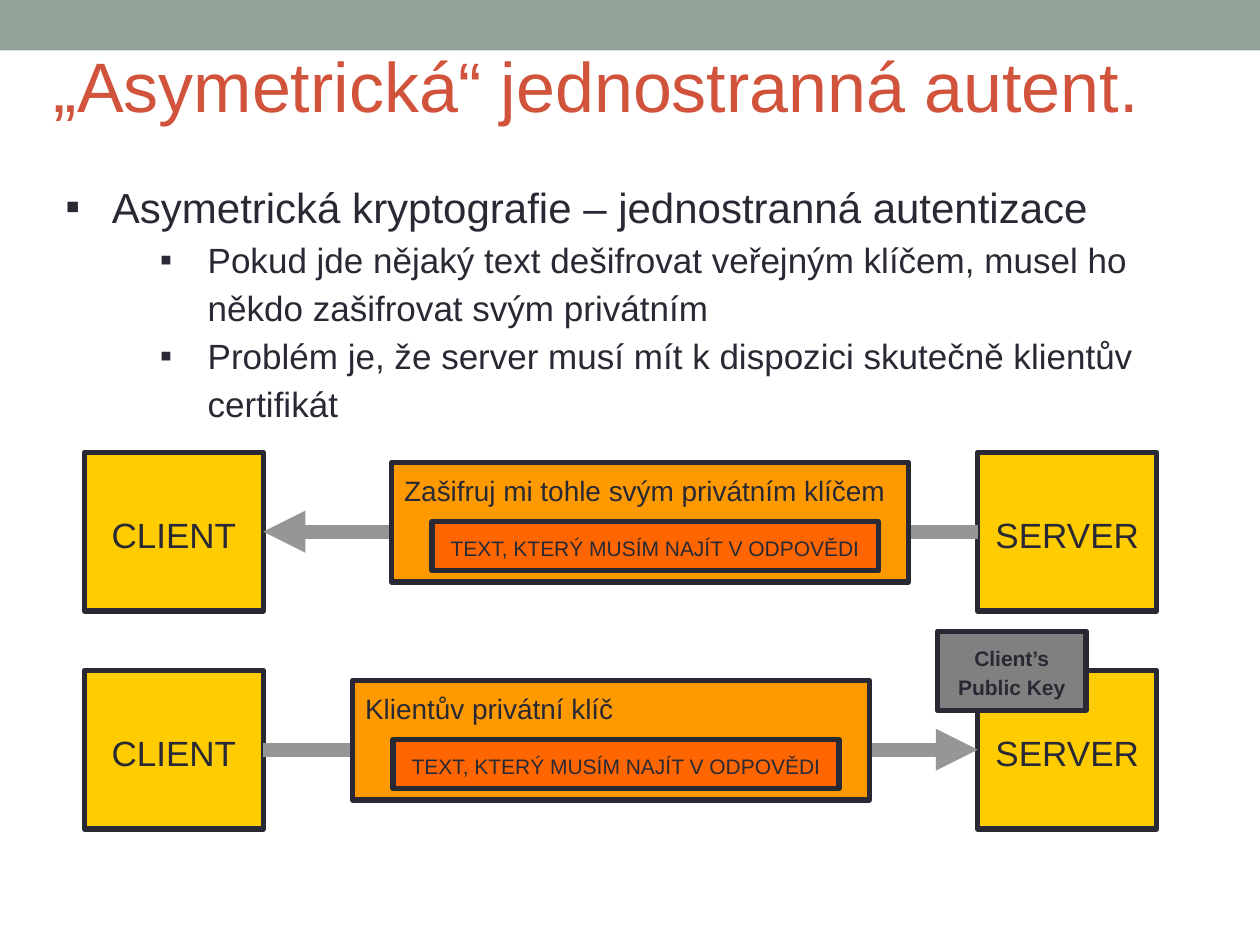
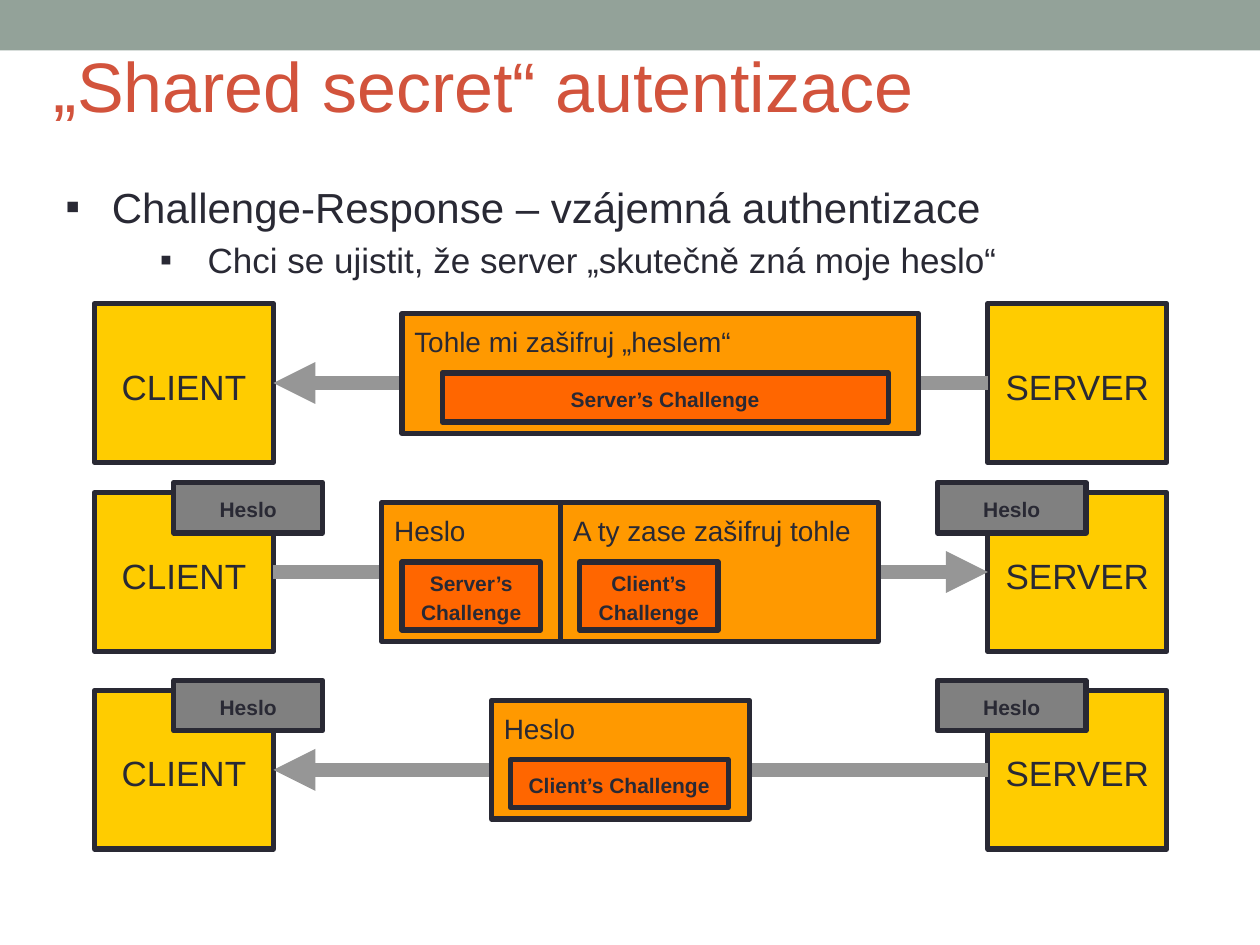
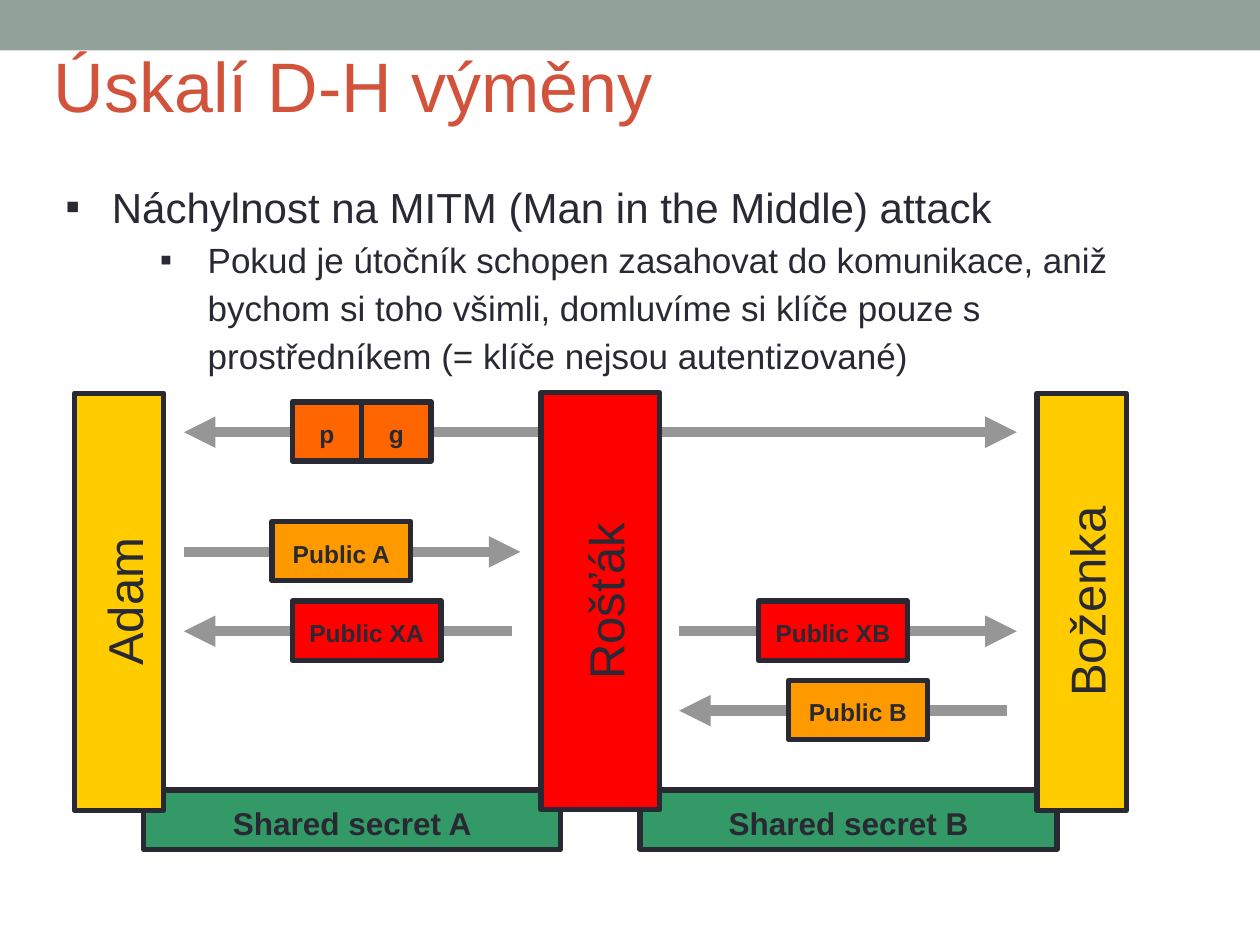
from lxml.etree import SubElement
from pptx import Presentation
from pptx.dml.color import RGBColor
from pptx.enum.shapes import MSO_CONNECTOR, MSO_SHAPE
from pptx.enum.text import MSO_ANCHOR, PP_ALIGN
from pptx.oxml.ns import qn
from pptx.util import Pt

PX = 9144
INK = RGBColor(0x29, 0x29, 0x34)
SAGE = RGBColor(0x93, 0xA2, 0x99)
BRICK = RGBColor(0xD2, 0x53, 0x3C)
YELLOW = RGBColor(0xFF, 0xCC, 0x00)
AMBER = RGBColor(0xFF, 0x99, 0x00)
ORANGE = RGBColor(0xFF, 0x66, 0x00)
RED = RGBColor(0xFF, 0x00, 0x00)
GREEN = RGBColor(0x33, 0x99, 0x66)
GREY = RGBColor(0x80, 0x80, 0x80)
ARROW_GREY = RGBColor(0x96, 0x96, 0x96)

LINE_SPACING = 1.15
BULLET_LEVELS = [
    {"size": 24, "marL": 37, "indent": -37},
    {"size": 20, "marL": 113, "indent": -38},
]
PARTY_SIZE = 142, 126
PARTY_GAP = 709
PILLAR_LENGTH = 331
PILLAR_MIDDLE = 477
KEY_HEIGHT = 47


class Deck:
    def __init__(self):
        self.presentation = Presentation()
        self.presentation.slide_width = 1000 * PX
        self.presentation.slide_height = 750 * PX
        self.slide = None

    def start(self, title, *bullets):
        self.slide = self.presentation.slides.add_slide(self.presentation.slide_layouts[6])
        self.rectangle(0, 0, 1000, 40, SAGE).line.fill.background()
        heading = self.text_frame(33, 28, 939, 77, MSO_ANCHOR.BOTTOM)
        self.add_text(heading.paragraphs[0], title, 40, color=BRICK)
        body = self.text_frame(42, 133, 917, 201, MSO_ANCHOR.TOP)
        for index, bullet in enumerate(bullets):
            paragraph = body.add_paragraph() if index else body.paragraphs[0]
            self.bullet(paragraph, bullet, min(index, 1))

    def text_frame(self, left, top, width, height, anchor):
        frame = self.slide.shapes.add_textbox(left * PX, top * PX, width * PX, height * PX).text_frame
        frame.word_wrap = True
        frame.vertical_anchor = anchor
        return frame

    def add_text(self, paragraph, text, size, bold=False, color=INK):
        run = paragraph.add_run()
        run.text = text
        run.font.color.rgb = color
        for attribute, value in {"name": "Arial", "size": Pt(size), "bold": bold}.items():
            setattr(run.font, attribute, value)

    def bullet(self, paragraph, text, level):
        style = BULLET_LEVELS[level]
        for attribute, value in {"level": level, "line_spacing": LINE_SPACING}.items():
            setattr(paragraph, attribute, value)
        properties = paragraph._p.get_or_add_pPr()
        for attribute in ("marL", "indent"):
            properties.set(attribute, str(style[attribute] * PX))
        SubElement(properties, qn("a:buFont"), typeface="Arial")
        SubElement(properties, qn("a:buChar"), char="▪")
        self.add_text(paragraph, text, style["size"])

    def rectangle(self, left, top, width, height, fill):
        shape = self.slide.shapes.add_shape(
            MSO_SHAPE.RECTANGLE, left * PX, top * PX, width * PX, height * PX)
        shape.shadow.inherit = False
        shape.fill.solid()
        shape.fill.fore_color.rgb = fill
        return shape

    def box(self, left, top, width, height, fill, text, size, bold=False,
            align=PP_ALIGN.CENTER, anchor=MSO_ANCHOR.MIDDLE):
        shape = self.rectangle(left, top, width, height, fill)
        shape.line.color.rgb = INK
        shape.line.width = Pt(3)
        shape.text_frame.word_wrap = True
        shape.text_frame.vertical_anchor = anchor
        paragraph = shape.text_frame.paragraphs[0]
        for attribute, value in {"alignment": align, "line_spacing": LINE_SPACING}.items():
            setattr(paragraph, attribute, value)
        before = SubElement(paragraph._p.get_or_add_pPr(), qn("a:spcBef"))
        SubElement(before, qn("a:spcPct"), val="50000")
        self.add_text(paragraph, text, size, bold)
        return shape

    def arrow(self, start, end, y, weight=6, both_ends=False):
        line = self.slide.shapes.add_connector(
            MSO_CONNECTOR.STRAIGHT, start * PX, y * PX, end * PX, y * PX)
        line.line.color.rgb = ARROW_GREY
        line.line.width = Pt(weight)
        outline = line.line._get_or_add_ln()
        for tip in ("a:headEnd", "a:tailEnd")[not both_ends:]:
            SubElement(outline, qn(tip), type="triangle")
        SubElement(line._element.spPr, qn("a:effectLst"))
        return line

    def exchange(self, left, top, to_server):
        server = self.box(left + PARTY_GAP, top, *PARTY_SIZE, YELLOW, "SERVER", 20)
        client = self.box(left, top, *PARTY_SIZE, YELLOW, "CLIENT", 20)
        client_end, server_end = (client, 3, left + PARTY_SIZE[0]), (server, 1, left + PARTY_GAP)
        sender, receiver = (client_end, server_end) if to_server else (server_end, client_end)
        line = self.arrow(sender[2], receiver[2], top + PARTY_SIZE[1] // 2, weight=8)
        line.begin_connect(*sender[:2])
        line.end_connect(*receiver[:2])

    def message(self, left, top, width, height, label, payload, payload_inset, payload_width, bold=True):
        self.box(left, top, width, height, AMBER, label, 16,
                 align=PP_ALIGN.LEFT, anchor=MSO_ANCHOR.TOP)
        self.box(left + payload_inset, top + 47, payload_width, height - 56,
                 ORANGE, payload, 12, bold)

    def known_key(self, left, top, text, height=40):
        self.box(left, top, 118, height, GREY, text, 12, True)

    def pillar(self, center, width, fill, name):
        pillar = self.box(center - PILLAR_LENGTH // 2, PILLAR_MIDDLE - width // 2,
                          PILLAR_LENGTH, width, fill, name, 28)
        pillar.rotation = 270

    def sent_key(self, left, middle, width, fill, text):
        self.box(left, middle - KEY_HEIGHT // 2 - 1, width, KEY_HEIGHT, fill, text, 14, True)


def one_sided_authentication(deck):
    deck.start(
        "„Asymetrická“ jednostranná autent.",
        "Asymetrická kryptografie – jednostranná autentizace",
        "Pokud jde nějaký text dešifrovat veřejným klíčem, musel ho někdo zašifrovat svým privátním",
        "Problém je, že server musí mít k dispozici skutečně klientův certifikát",
    )
    for top, to_server, message_left, label in (
        (359, False, 311, "Zašifruj mi tohle svým privátním klíčem"),
        (532, True, 280, "Klientův privátní klíč"),
    ):
        deck.exchange(67, top, to_server)
        deck.message(message_left, top + 8, 410, 95, label,
                     "TEXT, KTERÝ MUSÍM NAJÍT V ODPOVĚDI", 32, 354, bold=False)
    deck.known_key(744, 501, "Client’s Public Key", height=63)


def shared_secret(deck):
    deck.start(
        "„Shared secret“ autentizace",
        "Challenge-Response – vzájemná authentizace",
        "Chci se ujistit, že server „skutečně zná moje heslo“",
    )
    server_challenge, client_challenge = "Server’s Challenge", "Client’s Challenge"
    rows = (
        (241, False, False, [(319, 410, 95, "Tohle mi zašifruj „heslem“", server_challenge, 32, 354)]),
        (391, True, True, [(303, 142, 110, "Heslo", server_challenge, 16, 110),
                           (445, 252, 110, "A ty zase zašifruj tohle", client_challenge, 15, 110)]),
        (548, False, True, [(390, 205, 94, "Heslo", client_challenge, 15, 173)]),
    )
    for top, to_server, password_known, messages in rows:
        deck.exchange(75, top, to_server)
        for left, *content in messages:
            deck.message(left, top + 8, *content)
        if password_known:
            for left in (138, 744):
                deck.known_key(left, top - 8, "Heslo")


def man_in_the_middle(deck):
    deck.start(
        "Úskalí D-H výměny",
        "Náchylnost na MITM (Man in the Middle) attack",
        "Pokud je útočník schopen zasahovat do komunikace, aniž bychom si toho všimli, "
        "domluvíme si klíče pouze s prostředníkem (= klíče nejsou autentizované)",
    )
    for left, secret in ((114, "Shared secret A"), (508, "Shared secret B")):
        deck.box(left, 627, 331, KEY_HEIGHT, GREEN, secret, 18, True)
    deck.arrow(146, 807, 343, both_ends=True)
    for left, parameter in ((232, "p"), (287, "g")):
        deck.sent_key(left, 343, 55, ORANGE, parameter)
    for start, end, middle, left, width, fill, key in (
        (146, 413, 438, 216, 110, AMBER, "Public A"),
        (799, 539, 564, 626, 110, AMBER, "Public B"),
        (539, 807, 501, 602, 118, RED, "Public XB"),
        (406, 146, 501, 232, 118, RED, "Public XA"),
    ):
        deck.arrow(start, end, middle)
        deck.sent_key(left, middle, width, fill, key)
    for center, width, fill, name in (
        (476, 94, RED, "Rošťák"),
        (94, 71, YELLOW, "Adam"),
        (858, 71, YELLOW, "Boženka"),
    ):
        deck.pillar(center, width, fill, name)


def main():
    deck = Deck()
    one_sided_authentication(deck)
    shared_secret(deck)
    man_in_the_middle(deck)
    deck.presentation.save("out.pptx")


if __name__ == "__main__":
    main()
